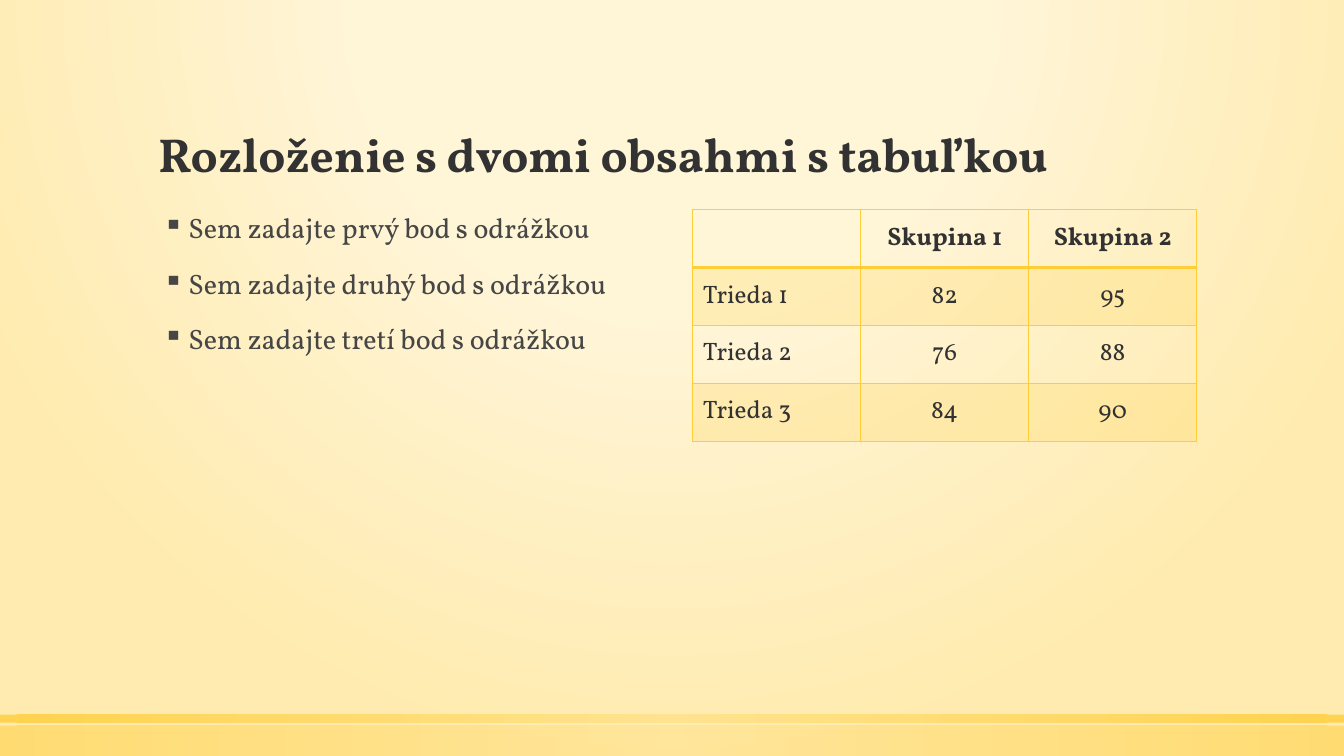
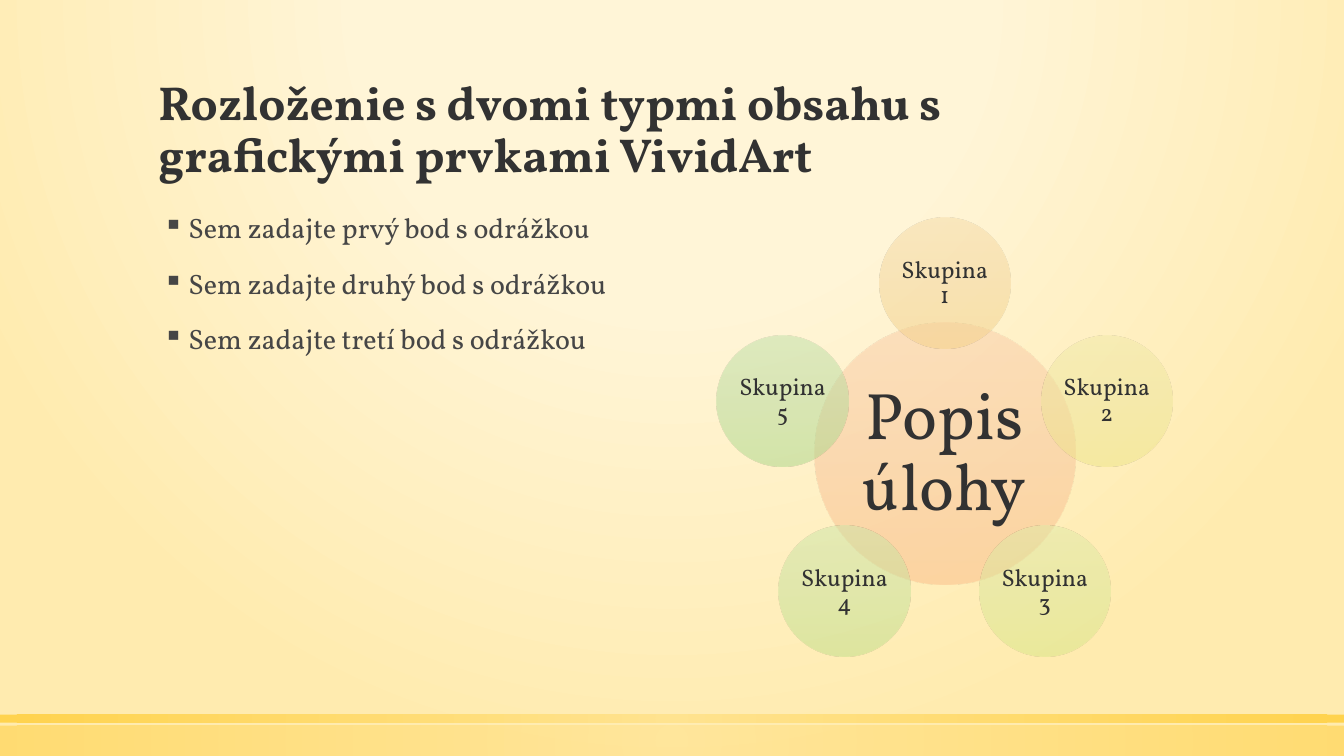
from math import cos, pi, sin

from lxml import etree
from pptx import Presentation
from pptx.dml.color import RGBColor
from pptx.enum.shapes import MSO_SHAPE
from pptx.enum.text import MSO_ANCHOR, PP_ALIGN
from pptx.oxml import parse_xml
from pptx.oxml.ns import nsdecls, qn
from pptx.util import Inches, Pt

RECT, OVAL = MSO_SHAPE.RECTANGLE, MSO_SHAPE.OVAL
MIDDLE, BOTTOM, TOP = MSO_ANCHOR.MIDDLE, MSO_ANCHOR.BOTTOM, MSO_ANCHOR.TOP
LEFT, CENTER = PP_ALIGN.LEFT, PP_ALIGN.CENTER

FONT = "Vollkorn"
INK = RGBColor(0x32, 0x32, 0x32)
GREY = RGBColor(0x46, 0x46, 0x46)
GOLD = RGBColor(0xFF, 0xCD, 0x36)
LIGHT = RGBColor(0xFF, 0xE1, 0x86)
CREAM = RGBColor(0xFF, 0xF5, 0xD7)
SAND = RGBColor(0xFF, 0xEB, 0xAF)

WIDE, HIGH = 13.33, 7.5
PAGE = [(0, CREAM, 59), (40, CREAM, 66), (100, SAND, 100)]
BANDS = [(7.2, 0.3, 50), (7.09, 0.08, 80)]

POINTS = [
    "Sem zadajte prvý bod s odrážkou",
    "Sem zadajte druhý bod s odrážkou",
    "Sem zadajte tretí bod s odrážkou",
]
TABLE_TITLE = "Rozloženie s dvomi obsahmi s tabuľkou"
ROWS = [
    ("", "Skupina 1", "Skupina 2"),
    ("Trieda 1", "82", "95"),
    ("Trieda 2", "76", "88"),
    ("Trieda 3", "84", "90"),
]
RING_TITLE = "Rozloženie s dvomi typmi obsahu s grafickými prvkami VividArt"
HUB = ("Popis úlohy", ("FACDA9", "F8C39A", "FBBB87"))
RING = [
    ("Skupina 1", ("F6DBA8", "F3D49A", "F5D187")),
    ("Skupina 2", ("F1EAA8", "EDE59A", "EEE587")),
    ("Skupina 3", ("E0EBA8", "DAE79A", "D8E787")),
    ("Skupina 4", ("CDE6A8", "C5E19A", "BEE088")),
    ("Skupina 5", ("BFE0A9", "B4DA9B", "A9D889")),
]
MID_X, MID_Y, REACH = 9.37, 4.5, 1.69


def box(*sides):
    return [Inches(side) for side in sides]


def tint(color, alpha):
    return f'<a:srgbClr val="{color}"><a:alpha val="{alpha * 1000}"/></a:srgbClr>'


def blend(stops, shade):
    marks = "".join(
        f'<a:gs pos="{pos * 1000}">{tint(color, alpha)}</a:gs>'
        for pos, color, alpha in stops
    )
    return parse_xml(
        f'<a:gradFill {nsdecls("a")} rotWithShape="1">'
        f"<a:gsLst>{marks}</a:gsLst>{shade}</a:gradFill>"
    )


def radial(stops, top, bottom):
    rect = f'<a:fillToRect l="50000" t="{top}" r="50000" b="{bottom}"/>'
    return blend(stops, f'<a:path path="circle">{rect}</a:path>')


def linear(colors):
    stops = [(pos, color, 50) for pos, color in zip((0, 50, 100), colors)]
    return blend(stops, '<a:lin ang="5400000" scaled="0"/>')


def add_form(slide, kind, place, fill):
    form = slide.shapes.add_shape(kind, *box(*place))
    form.shadow.inherit = False
    form.line.fill.background()
    form.fill.background()
    props = form._element.spPr
    props.replace(props.find(qn("a:noFill")), fill)
    return form


def style(para, size, color=INK, bold=False, align=LEFT, space=None):
    para.alignment = align
    para.line_spacing = space
    for run in para.runs:
        font = run.font
        font.name, font.size, font.bold = FONT, Pt(size), bold
        font.color.rgb = color


def set_page(master):
    master.background.fill.background()
    props = master.element.find(".//" + qn("p:bgPr"))
    props.replace(props.find(qn("a:noFill")), radial(PAGE, -80000, 180000))


def add_slide(deck, name):
    slide = deck.slides.add_slide(deck.slide_layouts[5])
    for top, tall, alpha in BANDS:
        stops = [(0, LIGHT, alpha), (100, GOLD, alpha)]
        add_form(slide, RECT, (0, top, WIDE, tall), radial(stops, 50000, 50000))
    title = slide.shapes.title
    title.left, title.top, title.width, title.height = box(1.47, 0.51, 10.4, 1.35)
    frame = title.text_frame
    frame.text = name
    frame.vertical_anchor = BOTTOM
    style(frame.paragraphs[0], 34, bold=True, space=0.9)
    add_list(slide)
    return slide


def add_list(slide):
    frame = slide.shapes.add_textbox(*box(1.47, 2.08, 5, 4.51)).text_frame
    frame.word_wrap = True
    frame.vertical_anchor = TOP
    frame.text = "\n".join(POINTS)
    for para in frame.paragraphs:
        style(para, 20, GREY, space=0.9)
        para.space_before = Pt(18)
        props = para._p.get_or_add_pPr()
        props.set("marL", str(Inches(0.3)))
        props.set("indent", str(Inches(-0.25)))
        etree.SubElement(props, qn("a:buChar")).set("char", "▪")


def set_edges(cell, top, bottom):
    props = cell._tc.get_or_add_tcPr()
    widths = {"lnL": 1, "lnR": 1, "lnT": top, "lnB": bottom}
    for spot, (tag, width) in enumerate(widths.items()):
        line = parse_xml(
            f'<a:{tag} {nsdecls("a")} w="{Pt(width)}"><a:solidFill>'
            f'<a:srgbClr val="{GOLD}"/></a:solidFill></a:{tag}>'
        )
        props.insert(spot, line)


def add_grid(slide):
    place = box(6.87, 2.08, 5, 2.3)
    grid = slide.shapes.add_table(len(ROWS), len(ROWS[0]), *place).table
    grid.first_row = grid.horz_banding = False
    for r, row in enumerate(ROWS):
        for c, text in enumerate(row):
            cell = grid.cell(r, c)
            cell.text = text
            cell.vertical_anchor = MIDDLE
            align = CENTER if c else LEFT
            style(cell.text_frame.paragraphs[0], 18, bold=r == 0, align=align)
            if r % 2:
                cell.fill.solid()
                cell.fill.fore_color.rgb = GOLD
                hue = cell._tc.tcPr.find(".//" + qn("a:srgbClr"))
                etree.SubElement(hue, qn("a:alpha")).set("val", "20000")
            else:
                cell.fill.background()
            set_edges(cell, 2 if r == 1 else 1, 2 if r == 0 else 1)


def add_disc(slide, item, x, y, wide, size, inset):
    text, colors = item
    place = (x - wide / 2, y - wide / 2, wide, wide)
    frame = add_form(slide, OVAL, place, linear(colors)).text_frame
    frame.word_wrap = True
    frame.vertical_anchor = MIDDLE
    frame.margin_left = frame.margin_right = Inches(inset)
    frame.margin_top = frame.margin_bottom = Inches(inset)
    frame.text = text
    style(frame.paragraphs[0], size, align=CENTER, space=0.9)


def add_ring(slide):
    add_disc(slide, HUB, MID_X, MID_Y, 2.59, 47, 0.07)
    for i, item in enumerate(RING):
        turn = 2 * pi * i / len(RING)
        x, y = MID_X + REACH * sin(turn), MID_Y - REACH * cos(turn)
        add_disc(slide, item, x, y, 1.3, 17, 0.02)


def main():
    deck = Presentation()
    deck.slide_width, deck.slide_height = box(WIDE, HIGH)
    set_page(deck.slide_master)
    add_grid(add_slide(deck, TABLE_TITLE))
    add_ring(add_slide(deck, RING_TITLE))
    deck.save("out.pptx")


if __name__ == "__main__":
    main()
